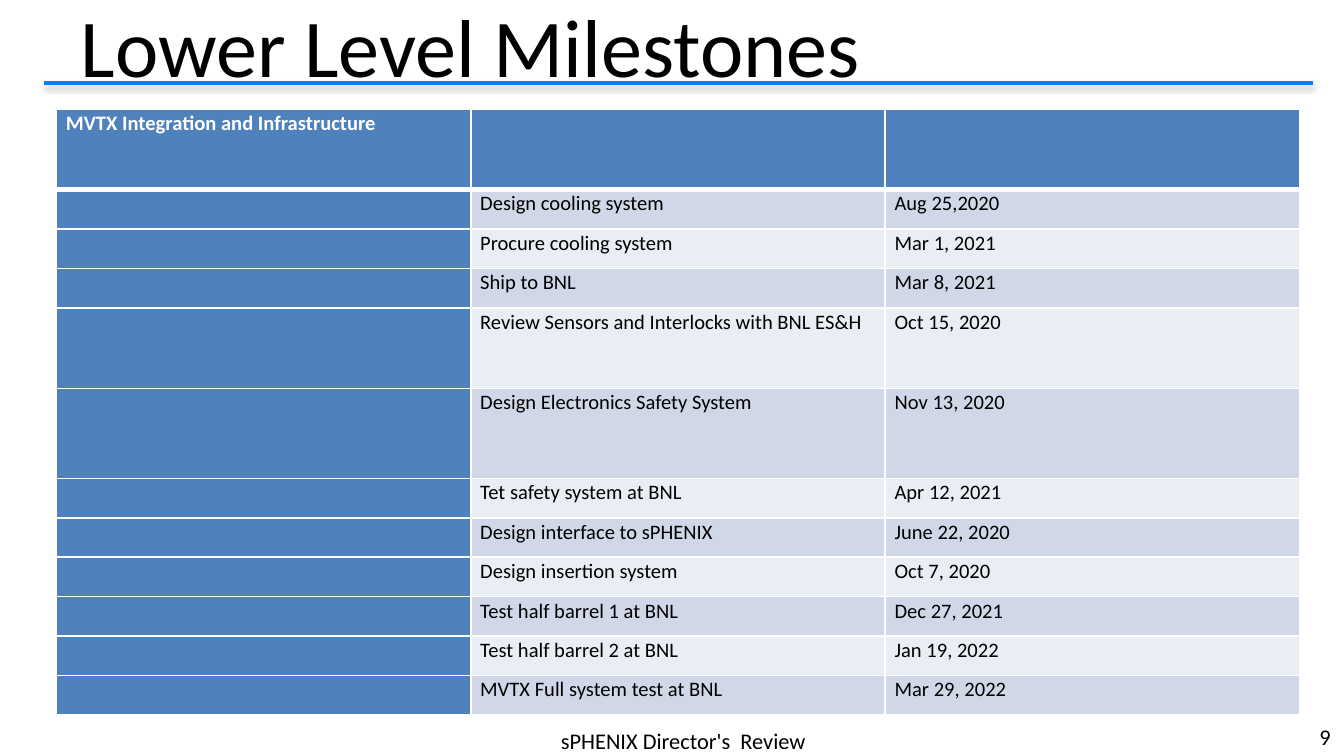
from typing import NamedTuple

import pptx
import pptx.dml.color
import pptx.enum.shapes
import pptx.enum.text
import pptx.oxml
import pptx.oxml.ns
import pptx.util
from lxml import etree

Inches = pptx.util.Inches
Pt = pptx.util.Pt
RGBColor = pptx.dml.color.RGBColor
Align = pptx.enum.text.PP_ALIGN
Anchor = pptx.enum.text.MSO_ANCHOR
qn = pptx.oxml.ns.qn

BLACK = RGBColor(0x00, 0x00, 0x00)
WHITE = RGBColor(0xFF, 0xFF, 0xFF)
RULE_BLUE = RGBColor(0x00, 0x80, 0xFF)
HEADER_BLUE = RGBColor(0x4F, 0x81, 0xBD)
BAND_DARK = RGBColor(0xD0, 0xD8, 0xE8)
BAND_LIGHT = RGBColor(0xE9, 0xED, 0xF4)
SHADOW_GREY = RGBColor(0x80, 0x80, 0x80)

FONT = "Calibri"
HEADING = "MVTX Integration and Infrastructure"
SLIDE_WIDTH = 10
TABLE_WIDTH = 9.25
TABLE_HEIGHT = 4.51
TALL_ROWS = {0: 0.6, 4: 0.6, 5: 0.67}


class Milestone(NamedTuple):
    task: str
    date: str


class Box(NamedTuple):
    left: float
    top: float
    width: float
    height: float


MILESTONES = [
    Milestone("Design cooling system", "Aug 25,2020"),
    Milestone("Procure cooling system", "Mar 1, 2021"),
    Milestone("Ship to BNL", "Mar 8, 2021"),
    Milestone("Review Sensors and Interlocks with BNL ES&H", "Oct 15, 2020"),
    Milestone("Design Electronics Safety System", "Nov 13, 2020"),
    Milestone("Tet safety system at BNL", "Apr 12, 2021"),
    Milestone("Design interface to sPHENIX", "June 22, 2020"),
    Milestone("Design insertion system", "Oct 7, 2020"),
    Milestone("Test half barrel 1 at BNL", "Dec 27, 2021"),
    Milestone("Test half barrel 2 at BNL", "Jan 19, 2022"),
    Milestone("MVTX Full system test at BNL", "Mar 29, 2022"),
]


def write_text(frame, text: str, *, size: float, color: RGBColor = BLACK,
               bold: bool = False, align=Align.LEFT, spacing: float = 1.0) -> None:
    paragraph = frame.paragraphs[0]
    paragraph.alignment = align
    paragraph.line_spacing = spacing
    if not text:
        etree.SubElement(paragraph._p, qn("a:endParaRPr"), sz=str(int(size * 100)))
        return
    run = paragraph.add_run()
    run.text = text
    run.font.name = FONT
    run.font.size = Pt(size)
    run.font.bold = bold
    run.font.color.rgb = color


def place(shape, box: Box) -> None:
    shape.left, shape.top, shape.width, shape.height = map(Inches, box)


def add_title(slide, text: str, box: Box) -> None:
    title = slide.shapes.title
    place(title, box)
    title.text_frame.vertical_anchor = Anchor.MIDDLE
    title.text_frame.auto_size = pptx.enum.text.MSO_AUTO_SIZE.NONE
    write_text(title.text_frame, text, size=44)


def add_footer(slide, text: str, box: Box, align) -> None:
    footer = slide.shapes.add_textbox(*map(Inches, box))
    footer.text_frame.word_wrap = True
    footer.text_frame.vertical_anchor = Anchor.MIDDLE
    write_text(footer.text_frame, text, size=12, align=align)


def add_title_rule(slide) -> None:
    rule = slide.shapes.add_connector(
        pptx.enum.shapes.MSO_CONNECTOR.STRAIGHT,
        Inches(0.33), Inches(0.62), Inches(9.77), Inches(0.62))
    rule.line.color.rgb = RULE_BLUE
    rule.line.width = Pt(2.25)
    effects = etree.SubElement(rule._element.spPr, qn("a:effectLst"))
    shadow = etree.SubElement(
        effects, qn("a:outerShdw"), blurRad=str(Pt(3.1)), dist=str(Pt(1.6)),
        dir=str(90 * 60000), rotWithShape="0")
    tint = etree.SubElement(shadow, qn("a:srgbClr"), val=str(SHADOW_GREY))
    etree.SubElement(tint, qn("a:alpha"), val="38000")


def set_borders(cell, top: float, bottom: float) -> None:
    properties = cell._tc.get_or_add_tcPr()
    widths = {"a:lnL": 1, "a:lnR": 1, "a:lnT": top, "a:lnB": bottom}
    for position, (side, width) in enumerate(widths.items()):
        border = etree.Element(qn(side), w=str(Pt(width)))
        fill = etree.SubElement(border, qn("a:solidFill"))
        etree.SubElement(fill, qn("a:srgbClr"), val=str(WHITE))
        properties.insert(position, border)


def add_milestone_table(slide) -> None:
    rows = [(HEADING, "", "")] + [("", *milestone) for milestone in MILESTONES]
    box = Box(0.42, 0.81, TABLE_WIDTH, TABLE_HEIGHT)
    table = slide.shapes.add_table(len(rows), 3, *map(Inches, box)).table
    short_row = (TABLE_HEIGHT - sum(TALL_ROWS.values())) / (len(rows) - len(TALL_ROWS))
    for column in table.columns:
        column.width = Inches(TABLE_WIDTH / 3)
    for row_index, texts in enumerate(rows):
        table.rows[row_index].height = Inches(TALL_ROWS.get(row_index, short_row))
        band = BAND_DARK if row_index % 2 else BAND_LIGHT
        for column_index, text in enumerate(texts):
            cell = table.cell(row_index, column_index)
            heading = row_index == 0 or column_index == 0
            cell.margin_left = cell.margin_right = Inches(0.07)
            cell.margin_top = cell.margin_bottom = 0
            cell.fill.solid()
            cell.fill.fore_color.rgb = HEADER_BLUE if heading else band
            set_borders(cell, top=3 if row_index == 1 else 1,
                        bottom=3 if row_index == 0 else 1)
            write_text(cell.text_frame, text, size=11, bold=heading,
                       color=WHITE if heading else BLACK, spacing=1.07)


def main() -> None:
    deck = pptx.Presentation()
    deck.slide_width = Inches(SLIDE_WIDTH)
    deck.slide_height = Inches(SLIDE_WIDTH * 9 / 16)
    slide = deck.slides.add_slide(deck.slide_layouts[5])
    add_title_rule(slide)
    add_footer(slide, "sPHENIX Director's  Review", Box(3.5, 5.39, 3.17, 0.24), Align.CENTER)
    add_footer(slide, "9", Box(9.42, 5.33, 0.58, 0.3), Align.RIGHT)
    add_title(slide, "Lower Level Milestones", Box(0.5, 0.03, 9, 0.6))
    add_milestone_table(slide)
    deck.save("out.pptx")


if __name__ == "__main__":
    main()
